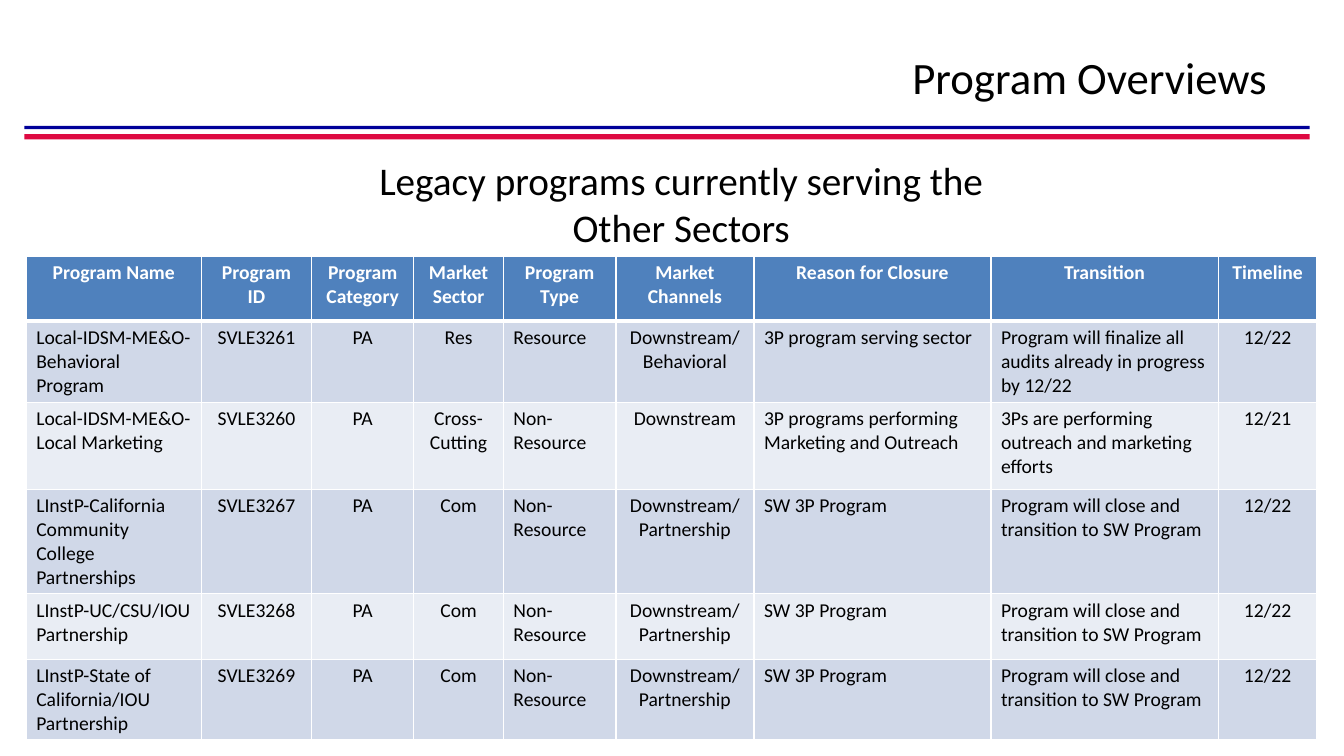
import pptx
import pptx.util
import pptx.dml.color
import pptx.enum.shapes
import pptx.enum.text
import lxml.etree

Pt = pptx.util.Pt
RGB = pptx.dml.color.RGBColor.from_string
ALIGN = pptx.enum.text.PP_ALIGN
ANCHOR = pptx.enum.text.MSO_ANCHOR
COLORS = {
    "black": "000000", "white": "FFFFFF", "red": "DE0A42", "navy": "000099",
    "header": "4F81BD", "dark band": "D0D8E8", "light band": "E9EDF4",
}


def write(para, text, size, color="black", align=ALIGN.LEFT, bold=False):
    para.alignment = align
    span = para.add_run()
    span.text = text
    looks = {"name": "Calibri", "size": Pt(size), "bold": bold}
    for name, value in looks.items():
        setattr(span.font, name, value)
    span.font.color.rgb = RGB(COLORS[color])


def add_border(cell, side, width):
    namespace = "{http://schemas.openxmlformats.org/drawingml/2006/main}"
    properties = cell._tc.get_or_add_tcPr()
    line = lxml.etree.SubElement(properties, namespace + side, w=str(Pt(width)))
    fill = lxml.etree.SubElement(line, namespace + "solidFill")
    lxml.etree.SubElement(fill, namespace + "srgbClr", val=COLORS["white"])


deck = pptx.Presentation()
deck.slide_width, deck.slide_height = Pt(960), Pt(540)
page = deck.slides.add_slide(deck.slide_layouts[6])

# Double rule under the title
for color, top, height in [("red", 95.9, 3.8), ("navy", 90, 2.2)]:
    rule = page.shapes.add_shape(
        pptx.enum.shapes.MSO_SHAPE.RECTANGLE, Pt(17.4), Pt(top), Pt(918), Pt(height))
    rule.shadow.inherit = False
    rule.fill.solid()
    rule.fill.fore_color.rgb = RGB(COLORS[color])
    rule.line.fill.background()

# Title and subtitle
headings = [
    ("Program Overviews", 32, ALIGN.RIGHT, ANCHOR.MIDDLE, (216, 21.6, 696.2, 65.5)),
    ("Legacy programs currently serving the Other Sectors", 28, ALIGN.CENTER,
     ANCHOR.TOP, (255.8, 107.8, 461.5, 74.9)),
]
for text, size, align, anchor, place in headings:
    box = page.shapes.add_textbox(*map(Pt, place))
    box.text_frame.word_wrap = True
    box.text_frame.vertical_anchor = anchor
    write(box.text_frame.paragraphs[0], text, size, align=align)

# Program table
closing = "Program will close and transition to SW Program"
rows = [
    ("Program Name", "Program ID", "Program Category", "Market Sector", "Program Type",
     "Market Channels", "Reason for Closure", "Transition", "Timeline"),
    ("Local-IDSM-ME&O-Behavioral Program", "SVLE3261", "PA", "Res", "Resource",
     "Downstream/ Behavioral", "3P program serving sector",
     "Program will finalize all audits already in progress by 12/22", "12/22"),
    ("Local-IDSM-ME&O-Local Marketing", "SVLE3260", "PA", "Cross- Cutting",
     "Non-Resource", "Downstream", "3P programs performing Marketing and Outreach",
     "3Ps are performing outreach and marketing efforts", "12/21"),
]
partnerships = [
    ("LInstP-California Community College Partnerships", "SVLE3267"),
    ("LInstP-UC/CSU/IOU Partnership", "SVLE3268"),
    ("LInstP-State of California/IOU Partnership", "SVLE3269"),
]
for name, number in partnerships:
    rows.append((name, number, "PA", "Com", "Non-Resource", "Downstream/ Partnership",
                 "SW 3P Program", closing, "12/22"))
widths = [125.2, 78.7, 73, 64, 80.4, 98.6, 169.3, 162.4, 70.6]
heights = [46.2, 58.2, 62.2, 65.5, 47, 54.7]
left_aligned = {0, 4, 6, 7}

table = page.shapes.add_table(len(rows), len(widths), Pt(18.7), Pt(182.9),
                              Pt(sum(widths)), Pt(sum(heights))).table
table.horz_banding = False
for column, width in zip(table.columns, widths):
    column.width = Pt(width)
for index, (row, height) in enumerate(zip(table.rows, heights)):
    row.height = Pt(height)
    heading = index == 0
    band = "header" if heading else "dark band" if index % 2 else "light band"
    borders = {"lnL": 1, "lnR": 1, "lnT": 3 if index == 1 else 1,
               "lnB": 3 if heading else 1}
    for column_index, cell in enumerate(row.cells):
        for side, width in borders.items():
            add_border(cell, side, width)
        cell.fill.solid()
        cell.fill.fore_color.rgb = RGB(COLORS[band])
        to_left = not heading and column_index in left_aligned
        write(cell.text_frame.paragraphs[0], rows[index][column_index], 14,
              "white" if heading else "black",
              ALIGN.LEFT if to_left else ALIGN.CENTER, heading)

deck.save("out.pptx")
